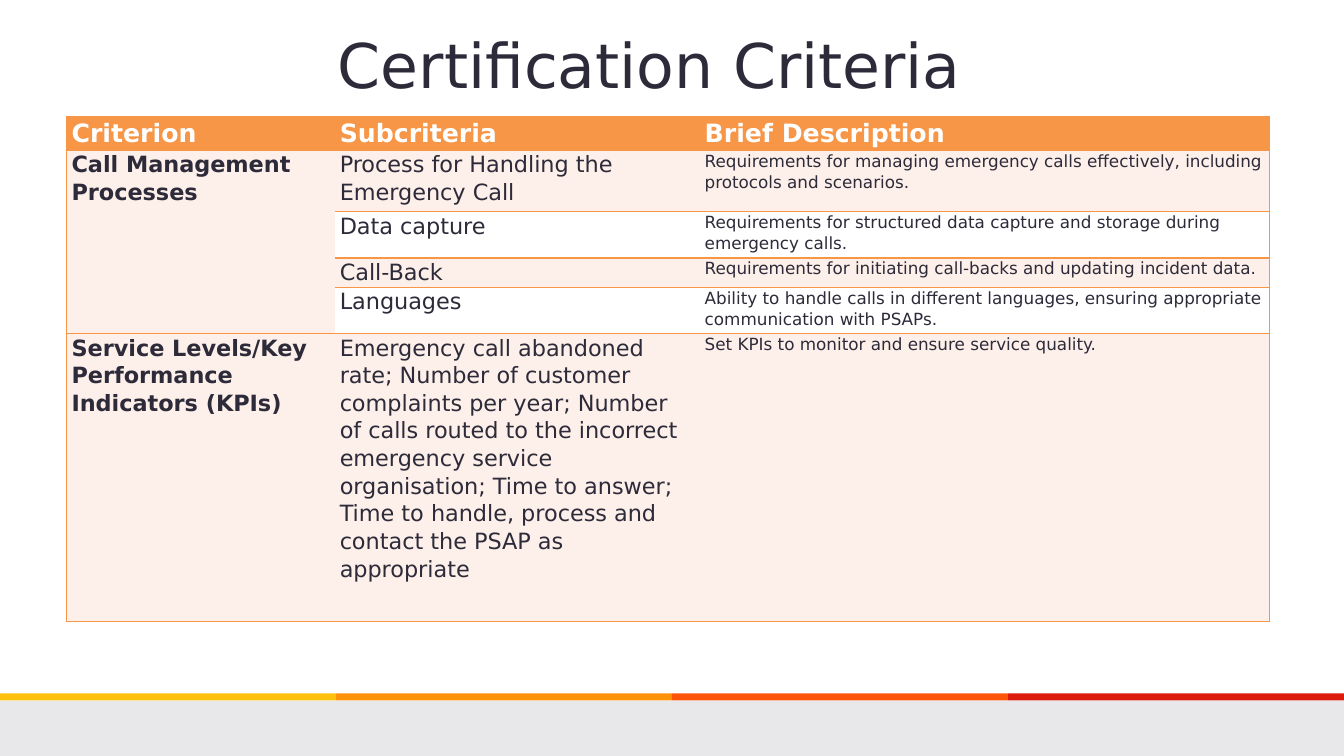
"""Build the certification criteria slide: a title, a bordered table and a striped footer."""
from lxml import etree
from pptx import Presentation
from pptx.dml.color import RGBColor
from pptx.enum.shapes import MSO_SHAPE
from pptx.enum.text import MSO_ANCHOR, PP_ALIGN
from pptx.oxml.ns import qn
from pptx.util import Inches, Pt

RECTANGLE = MSO_SHAPE.RECTANGLE
TOP, CENTER, LEFT = MSO_ANCHOR.TOP, PP_ALIGN.CENTER, PP_ALIGN.LEFT
INK = RGBColor(0x2D, 0x2B, 0x3A)
WHITE = RGBColor(0xFF, 0xFF, 0xFF)
ORANGE = RGBColor(0xF7, 0x96, 0x46)
BLUSH = RGBColor(0xFD, 0xEF, 0xE9)
FOOTER_GRAY = RGBColor(0xE8, 0xE8, 0xEA)
STRIPE_COLORS = [RGBColor(0xFD, 0xC0, 0x0D), RGBColor(0xFE, 0x93, 0x09),
                 RGBColor(0xFC, 0x55, 0x07), RGBColor(0xDC, 0x1B, 0x0C)]
FONT = "DejaVu Sans"

TITLE = "Certification Criteria"
HEADER = ("Criterion", "Subcriteria", "Brief Description")
CRITERIA = [
    ("Call Management Processes", [
        ("Process for Handling the Emergency Call",
         "Requirements for managing emergency calls effectively, including protocols and scenarios."),
        ("Data capture",
         "Requirements for structured data capture and storage during emergency calls."),
        ("Call-Back",
         "Requirements for initiating call-backs and updating incident data."),
        ("Languages",
         "Ability to handle calls in different languages, ensuring appropriate communication with PSAPs."),
    ]),
    ("Service Levels/Key Performance Indicators (KPIs)", [
        ("Emergency call abandoned rate; Number of customer complaints per year; "
         "Number of calls routed to the incorrect emergency service organisation; "
         "Time to answer; Time to handle, process and contact the PSAP as appropriate",
         "Set KPIs to monitor and ensure service quality."),
    ]),
]

SLIDE_W, SLIDE_H = 13.33, 7.5
COLUMN_WIDTHS = [2.66, 3.62, 5.65]
ROW_HEIGHTS = [0.33, 0.61, 0.46, 0.29, 0.46, 2.86]
TABLE_LEFT, TABLE_TOP = 0.66, 1.16
FOOTER_TOP, STRIPE_H = 6.95, 0.07
HEADER_FORMAT = {"size": Pt(18), "bold": True}
COLUMN_FORMATS = [{"size": Pt(16), "bold": True},
                  {"size": Pt(16), "bold": False},
                  {"size": Pt(12), "bold": False}]
CELL_FORMAT = {"margin_left": Inches(0.05), "margin_right": Inches(0.05),
               "margin_top": 0, "margin_bottom": 0, "vertical_anchor": TOP}
PARAGRAPH_FORMAT = {"line_spacing": 1.07, "space_after": Pt(8), "alignment": LEFT}


def apply(target, values):
    for attribute, value in values.items():
        setattr(target, attribute, value)


def style_font(font, color, values):
    apply(font, {"name": FONT, **values})
    font.color.rgb = color


def add_bar(slide, left, top, width, height, color):
    bar = slide.shapes.add_shape(RECTANGLE, *map(Inches, (left, top, width, height)))
    bar.shadow.inherit = False
    bar.fill.solid()
    bar.fill.fore_color.rgb = color
    bar.line.fill.background()


def add_footer(slide):
    add_bar(slide, 0, FOOTER_TOP, SLIDE_W, SLIDE_H - FOOTER_TOP, FOOTER_GRAY)
    stripe_w = SLIDE_W / len(STRIPE_COLORS)
    for index, color in enumerate(STRIPE_COLORS):
        add_bar(slide, index * stripe_w, FOOTER_TOP - STRIPE_H, stripe_w, STRIPE_H, color)


def fill_title(slide):
    title = slide.shapes.title
    apply(title, {"left": 0, "top": Inches(0.22),
                  "width": Inches(12.89), "height": Inches(1.3)})
    apply(title.text_frame, {"text": TITLE, "vertical_anchor": TOP, "word_wrap": True})
    paragraph = title.text_frame.paragraphs[0]
    paragraph.alignment = CENTER
    style_font(paragraph.runs[0].font, INK, {"size": Pt(44)})


def set_borders(cell, lined_sides):
    properties = cell._tc.get_or_add_tcPr()
    for position, side in enumerate("LRTB"):
        line = etree.Element(qn(f"a:ln{side}"), w=str(Pt(1)))
        if side in lined_sides:
            fill = etree.SubElement(line, qn("a:solidFill"))
            etree.SubElement(fill, qn("a:srgbClr"), val=str(ORANGE))
        else:
            etree.SubElement(line, qn("a:noFill"))
        properties.insert(position, line)


def fill_cell(cell, text, fill_color, text_color, font_format):
    apply(cell, CELL_FORMAT)
    cell.fill.solid()
    cell.fill.fore_color.rgb = fill_color
    if text:
        cell.text = text
        paragraph = cell.text_frame.paragraphs[0]
        apply(paragraph, PARAGRAPH_FORMAT)
        style_font(paragraph.runs[0].font, text_color, font_format)


def add_criteria_table(slide):
    rows = [HEADER]
    for criterion, entries in CRITERIA:
        rows += [("" if i else criterion, *entry) for i, entry in enumerate(entries)]
    table = slide.shapes.add_table(
        len(rows), len(HEADER), Inches(TABLE_LEFT), Inches(TABLE_TOP),
        Inches(sum(COLUMN_WIDTHS)), Inches(sum(ROW_HEIGHTS))).table
    apply(table, {"first_row": False, "horz_banding": False})
    for column, width in zip(table.columns, COLUMN_WIDTHS):
        column.width = Inches(width)
    for row, height in zip(table.rows, ROW_HEIGHTS):
        row.height = Inches(height)

    first = 1
    for _, entries in CRITERIA:
        last = first + len(entries) - 1
        if last > first:
            table.cell(first, 0).merge(table.cell(last, 0))
        first = last + 1

    for r, texts in enumerate(rows):
        for c, text in enumerate(texts):
            cell = table.cell(r, c)
            if r == 0:
                fill_cell(cell, text, ORANGE, WHITE, HEADER_FORMAT)
            else:
                band = BLUSH if r % 2 or c == 0 else WHITE
                fill_cell(cell, text, band, INK, COLUMN_FORMATS[c])
            group_ends = r + 1 == len(rows) or rows[r + 1][c]
            sides = "L" if c == 0 else "R" if c == len(HEADER) - 1 else ""
            sides += "T" if text else ""
            sides += "B" if group_ends or cell.is_merge_origin else ""
            set_borders(cell, sides)


def main():
    presentation = Presentation()
    apply(presentation, {"slide_width": Inches(SLIDE_W), "slide_height": Inches(SLIDE_H)})
    slide = presentation.slides.add_slide(presentation.slide_layouts[5])
    add_footer(slide)
    fill_title(slide)
    add_criteria_table(slide)
    presentation.save("out.pptx")


if __name__ == "__main__":
    main()
